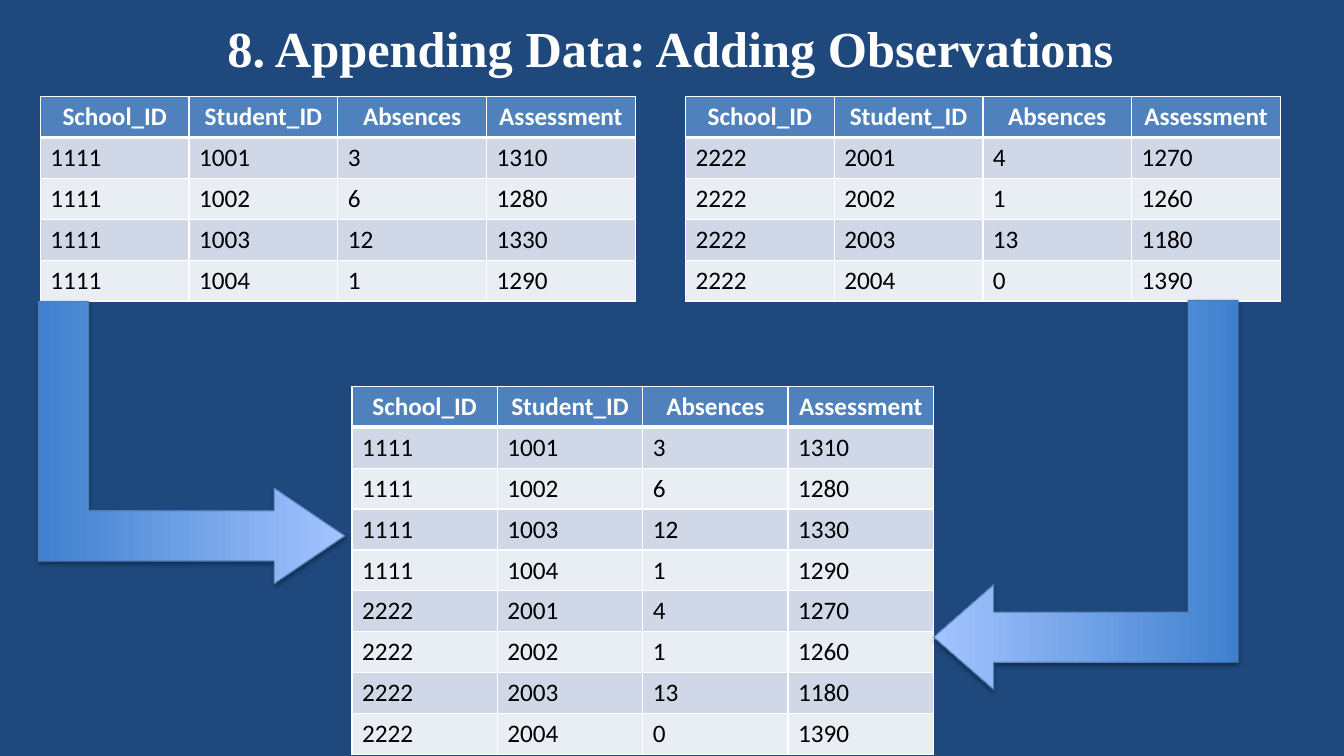
"""Build a slide showing how two student tables append into one."""
from dataclasses import dataclass

from lxml.etree import SubElement
from pptx import Presentation
from pptx.dml.color import RGBColor
from pptx.enum.shapes import MSO_SHAPE
from pptx.enum.text import MSO_ANCHOR, PP_ALIGN
from pptx.oxml.ns import qn
from pptx.util import Pt


@dataclass(frozen=True)
class Theme:
    background: str = "1F497D"
    white: str = "FFFFFF"
    black: str = "000000"
    header: str = "4F81BD"
    bands: tuple = ("D0D8E8", "E9EDF4")
    arrow_stops: tuple = ("3F80CE", "A4C4FF")
    arrow_line: str = "4B7EBC"
    title_font: str = "Times New Roman"
    body_font: str = "Calibri"
    title_size: int = 36
    body_size: int = 18
    row_height: float = 29.2


HEADINGS = ("School_ID", "Student_ID", "Absences", "Assessment")
FIRST_SCHOOL = [
    ("1111", "1001", "3", "1310"),
    ("1111", "1002", "6", "1280"),
    ("1111", "1003", "12", "1330"),
    ("1111", "1004", "1", "1290"),
]
SECOND_SCHOOL = [
    ("2222", "2001", "4", "1270"),
    ("2222", "2002", "1", "1260"),
    ("2222", "2003", "13", "1180"),
    ("2222", "2004", "0", "1390"),
]


class SlideBuilder:
    def __init__(self, prs, theme):
        self.theme = theme
        self.slide = prs.slides.add_slide(prs.slide_layouts[5])
        fill = self.slide.background.fill
        fill.solid()
        fill.fore_color.rgb = RGBColor.from_string(theme.background)

    def style(self, p, font, size, color, bold, align):
        p.alignment = align
        p.font.name = font
        p.font.size = Pt(size)
        p.font.bold = bold
        p.font.color.rgb = RGBColor.from_string(color)

    def title(self, text, left, top, width, height):
        t = self.theme
        sp = self.slide.shapes.title
        sp.left, sp.top, sp.width, sp.height = map(Pt, (left, top, width, height))
        tf = sp.text_frame
        tf.text = text
        tf.vertical_anchor = MSO_ANCHOR.MIDDLE
        self.style(tf.paragraphs[0], t.title_font, t.title_size, t.white, True, PP_ALIGN.CENTER)

    def borders(self, cell, top, bottom):
        tc_pr = cell._tc.get_or_add_tcPr()
        for side, width in (("L", 1), ("R", 1), ("T", top), ("B", bottom)):
            ln = SubElement(tc_pr, qn(f"a:ln{side}"), w=str(Pt(width)))
            fill = SubElement(ln, qn("a:solidFill"))
            SubElement(fill, qn("a:srgbClr"), val=self.theme.white)

    def cell(self, cell, text, row):
        t = self.theme
        is_header = row == 0
        self.borders(cell, 3 if row == 1 else 1, 3 if is_header else 1)
        cell.fill.solid()
        color = t.header if is_header else t.bands[(row - 1) % 2]
        cell.fill.fore_color.rgb = RGBColor.from_string(color)
        cell.text = text
        cell.vertical_anchor = MSO_ANCHOR.MIDDLE if is_header else MSO_ANCHOR.BOTTOM
        self.style(
            cell.text_frame.paragraphs[0], t.body_font, t.body_size,
            t.white if is_header else t.black, is_header,
            PP_ALIGN.CENTER if is_header else PP_ALIGN.LEFT,
        )

    def table(self, records, left, top, width):
        rows = [HEADINGS, *records]
        height = self.theme.row_height * len(rows)
        table = self.slide.shapes.add_table(
            len(rows), len(HEADINGS), Pt(left), Pt(top), Pt(width), Pt(height)
        ).table
        for row in table.rows:
            row.height = Pt(self.theme.row_height)
        for r, values in enumerate(rows):
            for c, text in enumerate(values):
                self.cell(table.cell(r, c), text, r)

    def bent_arrow(self, left, top, width, height, rotation, adjustments, flip=False):
        t = self.theme
        sp = self.slide.shapes.add_shape(
            MSO_SHAPE.BENT_UP_ARROW, Pt(left), Pt(top), Pt(width), Pt(height)
        )
        sp.rotation = rotation
        for i, value in enumerate(adjustments):
            sp.adjustments[i] = value
        sp.fill.gradient()
        sp.fill.gradient_angle = 90
        for position, (stop, color) in enumerate(zip(sp.fill.gradient_stops, t.arrow_stops)):
            stop.position = position
            stop.color.rgb = RGBColor.from_string(color)
        sp.line.color.rgb = RGBColor.from_string(t.arrow_line)
        sp.line.width = Pt(0.75)
        sp.shadow.inherit = False
        sp_pr = sp._element.spPr
        if flip:
            sp_pr.find(qn("a:xfrm")).set("flipH", "1")
        shadow = SubElement(
            sp_pr.find(qn("a:effectLst")), qn("a:outerShdw"),
            blurRad=str(Pt(3.1)), dist=str(Pt(1.8)), dir="5400000", rotWithShape="0",
        )
        color = SubElement(shadow, qn("a:srgbClr"), val=t.black)
        SubElement(color, qn("a:alpha"), val="35000")


def main():
    prs = Presentation()
    prs.slide_width, prs.slide_height = Pt(960), Pt(540)
    s = SlideBuilder(prs, Theme())
    s.title("8. Appending Data: Adding Observations", 131, 1.4, 696, 65.5)
    s.table(FIRST_SCHOOL, 28.8, 69, 425)
    s.table(SECOND_SCHOOL, 489.6, 69, 425)
    s.table(FIRST_SCHOOL + SECOND_SCHOOL, 251.4, 276, 415.4)
    s.bent_arrow(36, 206.6, 201.6, 218.9, 90, (0.178, 0.169, 0.25))
    s.bent_arrow(636.6, 244.8, 278, 217.4, 270, (0.164, 0.172, 0.197), flip=True)
    prs.save("out.pptx")


if __name__ == "__main__":
    main()
